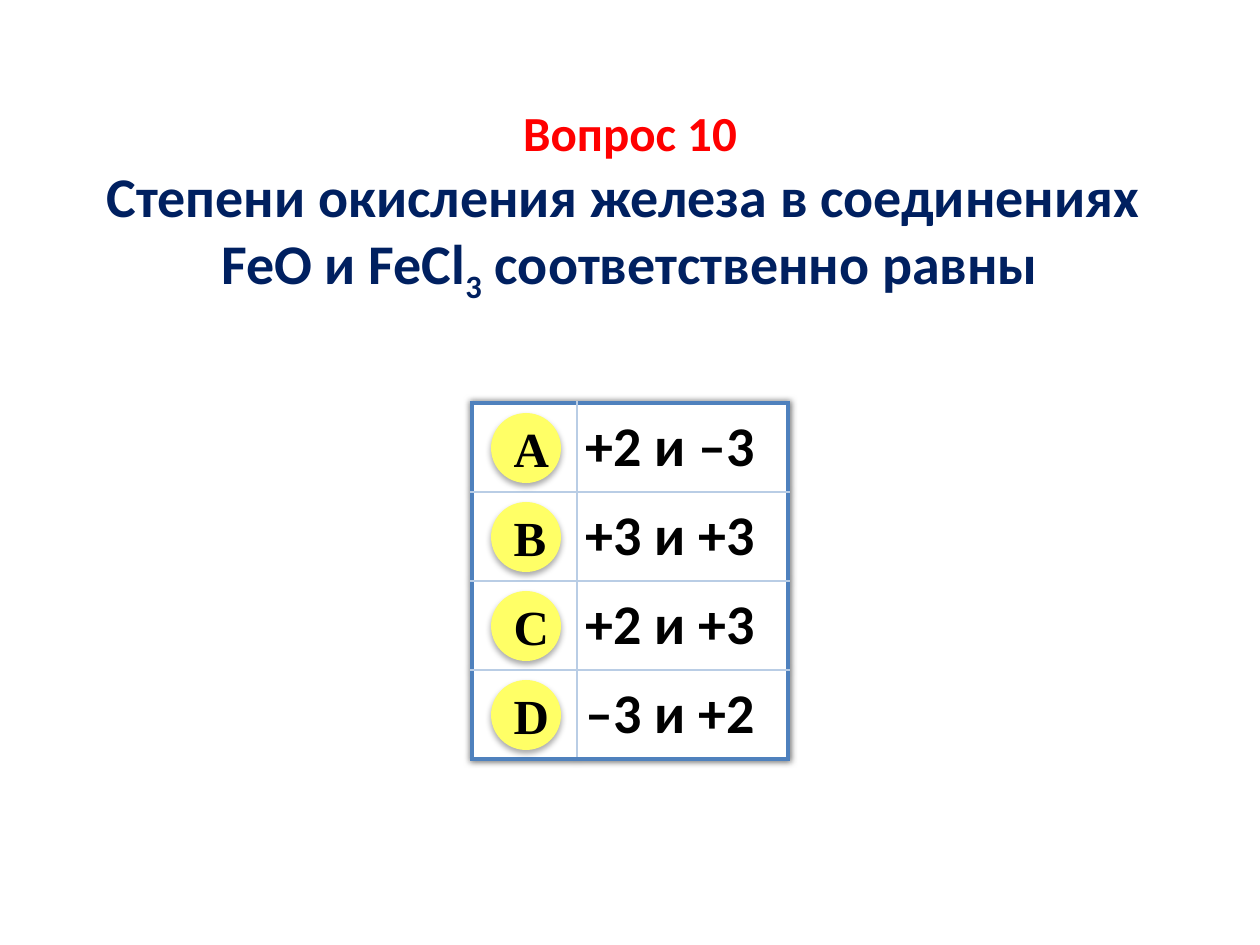
from lxml import etree
from pptx import Presentation
from pptx import util as u
from pptx.dml.color import RGBColor
from pptx.enum import shapes, text
from pptx.oxml import parse_xml
from pptx.oxml.ns import nsdecls, qn

WHITE = RGBColor(0xFF, 0xFF, 0xFF)
BLACK = RGBColor(0, 0, 0)
RED = RGBColor(0xFF, 0, 0)
NAVY = RGBColor(0, 0x20, 0x60)
YELLOW = RGBColor(0xFF, 0xFF, 0x66)
FRAME = RGBColor(0x4F, 0x81, 0xBD)
GRID = RGBColor(0xB9, 0xCD, 0xE5)


class QuizSlide:
    """Build a quiz slide, measured in px at 126 to the inch."""

    SCALE = 914400 / 126
    BODY, LETTER = "Calibri", "Times New Roman"

    def __init__(self, width, height):
        self.prs = Presentation()
        self.prs.slide_width, self.prs.slide_height = self.px(width), self.px(height)
        self.s = self.prs.slides.add_slide(self.prs.slide_layouts[6])

    def px(self, n):
        return u.Emu(round(n * self.SCALE))

    def run(self, p, words, size, color, font=BODY, baseline=0):
        r = p.add_run()
        r.text = words
        r.font.size, r.font.bold, r.font.name = u.Pt(size), True, font
        r.font.color.rgb = color
        if baseline:
            r.font._element.set("baseline", str(baseline))

    def shadow(self, parent, blur, dist, alpha, index=None):
        effect = parse_xml(
            f'<a:effectLst {nsdecls("a")}><a:outerShdw blurRad="{u.Pt(blur)}" '
            f'dist="{u.Pt(dist)}" dir="5400000" rotWithShape="0"><a:srgbClr val="000000">'
            f'<a:alpha val="{alpha * 1000}"/></a:srgbClr></a:outerShdw></a:effectLst>')
        parent.insert(len(parent) if index is None else index, effect)

    def shape(self, kind, x, y, w, h, fill):
        sp = self.s.shapes.add_shape(kind, *map(self.px, (x, y, w, h)))
        sp.fill.solid()
        sp.fill.fore_color.rgb = fill
        sp.line.fill.background()
        return sp

    def heading(self, x, y, w, h, lines):
        sp = self.shape(shapes.MSO_SHAPE.RECTANGLE, x, y, w, h, WHITE)
        sp.shadow.inherit = False
        tf = sp.text_frame
        tf.word_wrap = True
        tf.auto_size = text.MSO_AUTO_SIZE.SHAPE_TO_FIT_TEXT
        tf.vertical_anchor = text.MSO_ANCHOR.TOP
        for i, (size, color, runs) in enumerate(lines):
            p = tf.add_paragraph() if i else tf.paragraphs[0]
            p.alignment = text.PP_ALIGN.CENTER
            for words, baseline in runs:
                self.run(p, words, size, color, baseline=baseline)

    def badge(self, x, y, d, letter):
        sp = self.shape(shapes.MSO_SHAPE.OVAL, x, y, d, d, YELLOW)
        self.shadow(sp._element.spPr, 3.5, 2.2, 32)
        tf = sp.text_frame
        tf.word_wrap = True
        tf.vertical_anchor = text.MSO_ANCHOR.MIDDLE
        p = tf.paragraphs[0]
        p.alignment = text.PP_ALIGN.CENTER
        self.run(p, letter, 28, BLACK, self.LETTER)

    def border(self, cell, side, outer):
        color, width = (FRAME, 3) if outer else (GRID, 1)
        ln = etree.SubElement(cell._tc.get_or_add_tcPr(), qn(f"a:ln{side}"), w=str(u.Pt(width)))
        fill = etree.SubElement(ln, qn("a:solidFill"))
        etree.SubElement(fill, qn("a:srgbClr"), val=str(color))

    def answers(self, x, y, widths, row_h, options):
        n = len(options)
        frame = self.s.shapes.add_table(n, 2, *map(self.px, (x, y, sum(widths), n * row_h)))
        table = frame.table
        table.first_row = table.horz_banding = False
        self.shadow(table._tbl.tblPr, 4, 0, 60, index=0)
        for col, w in zip(table.columns, widths):
            col.width = self.px(w)
        for i, option in enumerate(options):
            table.rows[i].height = self.px(row_h)
            for j in range(2):
                cell = table.cell(i, j)
                edges = {"L": j == 0, "R": j == 1, "T": i == 0, "B": i == n - 1}
                for side, outer in edges.items():
                    self.border(cell, side, outer)
                cell.fill.solid()
                cell.fill.fore_color.rgb = WHITE
                cell.vertical_anchor = text.MSO_ANCHOR.MIDDLE
                cell.margin_left = cell.margin_right = self.px(9)
                cell.margin_top = cell.margin_bottom = 0
            self.run(table.cell(i, 1).text_frame.paragraphs[0], option, 32, BLACK)


def main():
    quiz = QuizSlide(1260, 945)
    x, y, row_h, badge_d = 472, 403, 89, 70
    quiz.answers(x, y, (105, 211), row_h, ("+2 и –3", "+3 и +3", "+2 и +3", "–3 и +2"))
    for i, letter in enumerate("ABCD"):
        quiz.badge(x + 19, y + 10 + i * row_h, badge_d, letter)
    quiz.heading(30, 96, 1200, 208, (
        (28, RED, [("Вопрос 10", 0)]),
        (32, NAVY, [("Степени окисления железа в соединениях ", 0)]),
        (32, NAVY, [("FeO и FeCl", 0), ("3", -25000), (" соответственно равны", 0)]),
    ))
    quiz.prs.save("out.pptx")


if __name__ == "__main__":
    main()
